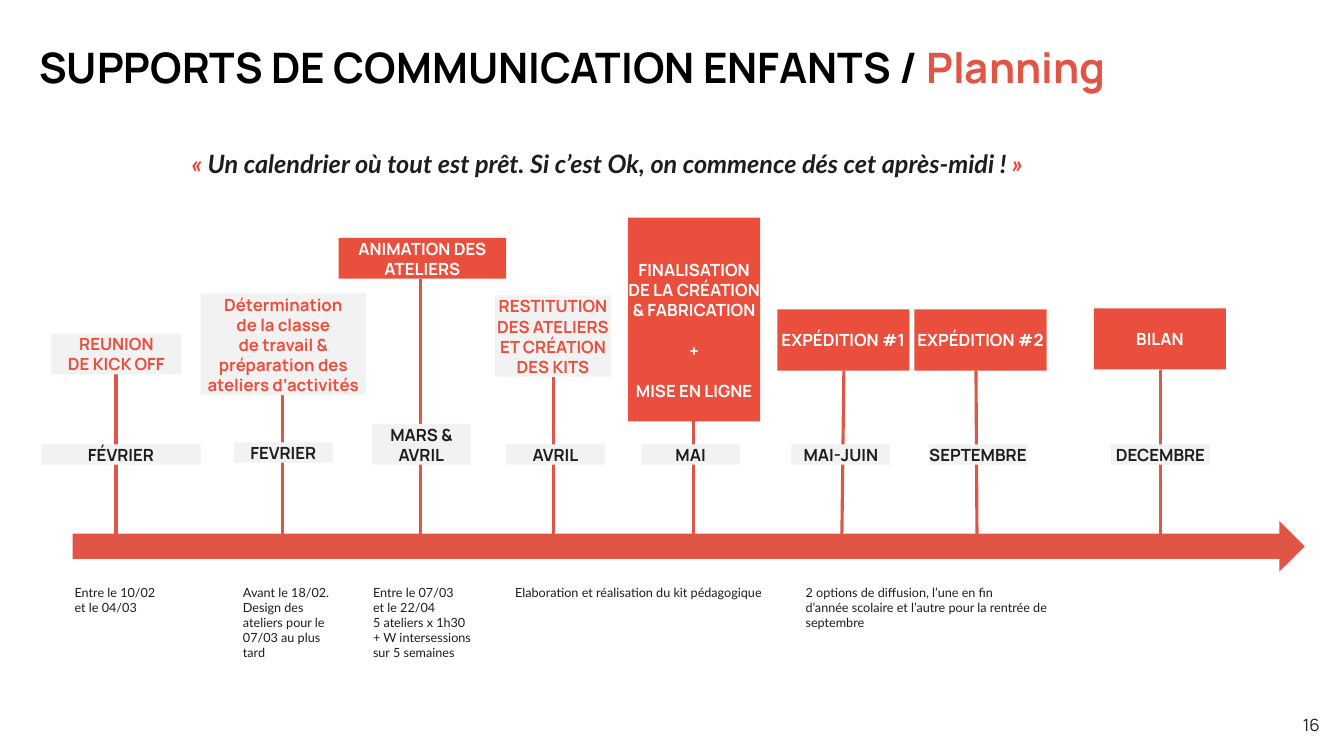
from lxml import etree
from pptx import Presentation
from pptx.dml.color import RGBColor
from pptx.enum.shapes import MSO_CONNECTOR, MSO_SHAPE
from pptx.enum.text import MSO_ANCHOR, MSO_AUTO_SIZE, PP_ALIGN
from pptx.oxml.ns import qn
from pptx.util import Inches, Pt

LEFT, CENTER, RIGHT = PP_ALIGN.LEFT, PP_ALIGN.CENTER, PP_ALIGN.RIGHT
TOP, MIDDLE, BOTTOM = MSO_ANCHOR.TOP, MSO_ANCHOR.MIDDLE, MSO_ANCHOR.BOTTOM
RECT, ARROW = MSO_SHAPE.RECTANGLE, MSO_SHAPE.RIGHT_ARROW
STRAIGHT, NO_FIT = MSO_CONNECTOR.STRAIGHT, MSO_AUTO_SIZE.NONE

BLACK = RGBColor(0x00, 0x00, 0x00)
WHITE = RGBColor(0xFF, 0xFF, 0xFF)
INK = RGBColor(0x1D, 0x1D, 0x1D)
GREY = RGBColor(0xF2, 0xF2, 0xF2)
CORAL = RGBColor(0xE0, 0x55, 0x46)
RED = RGBColor(0xEA, 0x4F, 0x3D)
QUOTE_RED = RGBColor(0xF4, 0x43, 0x36)

TITLE = [("SUPPORTS DE COMMUNICATION ENFANTS / ", BLACK), ("Planning", CORAL)]
QUOTE = [
    ("«\u00a0", QUOTE_RED),
    ("Un calendrier où tout est prêt. Si c’est Ok, on commence dés cet après-midi !\u00a0", INK),
    ("»", QUOTE_RED),
]
PAGE = "16"

# label, fill, centre, top, width, lines high, lines free below
STEPS = [
    ("REUNION\nDE KICK OFF", GREY, 11.55, 33.1, 12.9, 2, 0),
    ("Détermination\nde la classe\nde travail & préparation des ateliers d’activités",
     GREY, 28.1, 29.1, 16.4, 5, 0),
    ("ANIMATION DES ATELIERS", RED, 41.9, 23.6, 16.6, 2, 0),
    ("RESTITUTION DES ATELIERS ET CRÉATION DES KITS", GREY, 54.85, 29.3, 11.5, 4, 0),
    ("FINALISATION\nDE LA CRÉATION\n& FABRICATION\n\n+\n\nMISE EN LIGNE",
     RED, 68.85, 21.6, 13.1, 10, 1),
    ("EXPÉDITION #1", RED, 83.65, 30.7, 13.1, 3, 1),
    ("EXPÉDITION #2", RED, 97.25, 30.7, 13.1, 3, 1),
    ("BILAN", RED, 115.05, 30.6, 13.1, 3, 1),
]
# label, centre, bottom, width, lines high
MONTHS = [
    ("FÉVRIER", 12, 46.1, 15.8, 1),
    ("FEVRIER", 28.1, 45.9, 9.8, 1),
    ("MARS & AVRIL", 41.8, 46.1, 9.8, 2),
    ("AVRIL", 55.1, 46.1, 9.8, 1),
    ("MAI", 68.5, 46.1, 9.8, 1),
    ("MAI-JUIN", 83.4, 46.1, 9.8, 1),
    ("SEPTEMBRE", 97, 46.1, 9.8, 1),
    ("DECEMBRE", 115.1, 46.1, 9.8, 1),
]
# foot, head
STEMS = [(11.5, 11.5), (28, 28), (41.7, 41.7), (54.9, 54.9),
         (68.8, 68.8), (83.5, 83.7), (96.9, 96.8), (115.1, 115.1)]
# text, left, width
NOTES = [
    ("Entre le 10/02\net le 04/03", 7.4, 9.5),
    ("Avant le 18/02.\nDesign des ateliers pour le 07/03 au plus tard", 24.1, 8.9),
    ("Entre le 07/03\net le 22/04\n5 ateliers x 1h30\n+ W intersessions\nsur 5 semaines", 37, 11),
    ("Elaboration et réalisation du kit pédagogique", 51.1, 26.2),
    ("2 options de diffusion, l’une en fin\nd’année scolaire et l’autre pour la rentrée de septembre",
     79.9, 24),
]
LINE = 2.02
AXIS, NOTE_TOP = 53, 58


def grid(*cells):
    return [Inches(c / 10) for c in cells]


def write(sp, text, size=12, font="Manrope", color=INK, bold=False, italic=False,
          align=LEFT, anchor=TOP, below=0):
    tf = sp.text_frame
    tf.word_wrap, tf.auto_size, tf.vertical_anchor = True, NO_FIT, anchor
    tf.margin_left = tf.margin_top = tf.margin_right = 0
    tf.margin_bottom = grid(below)[0]
    if isinstance(text, str):
        paragraphs = [(i > 0 and j == 0, [(line, color)])
                      for i, group in enumerate(text.split("\n\n"))
                      for j, line in enumerate(group.split("\n"))]
    else:
        paragraphs = [(False, text)]
    for n, (gap, runs) in enumerate(paragraphs):
        p = tf.add_paragraph() if n else tf.paragraphs[0]
        p.alignment = align
        if gap:
            p.space_before = Pt(size * 1.2)
        for words, tone in runs:
            r = p.add_run()
            r.text = words
            f = r.font
            f.name, f.size, f.bold, f.italic = font, Pt(size), bold, italic
            f.color.rgb = tone


def add_block(s, kind, fill, *at):
    sp = s.shapes.add_shape(kind, *grid(*at))
    sp.shadow.inherit = False
    sp.fill.solid()
    sp.fill.fore_color.rgb = fill
    sp.line.fill.background()
    return sp


def add_stem(s, foot, head, top):
    c = s.shapes.add_connector(STRAIGHT, *grid(foot, AXIS, head, top))
    c.line.color.rgb = CORAL
    c.line.width = Pt(2.25)
    etree.SubElement(c._element.spPr, qn("a:effectLst"))


def main():
    prs = Presentation()
    prs.slide_width, prs.slide_height = Inches(13.33), Inches(7.5)
    s = prs.slides.add_slide(prs.slide_layouts[5])

    title = s.shapes.title
    title.left, title.top, title.width, title.height = grid(3.9, 4.1, 123.8, 5)
    write(title, TITLE, size=30, bold=True)
    write(s.shapes.add_textbox(*grid(19, 14.7, 94.8, 3)), QUOTE,
          size=18, font="Lato", bold=True, italic=True)

    add_block(s, ARROW, CORAL, 7.2, 51.7, 122.2, 5)
    for (foot, head), step in zip(STEMS, STEPS):
        label, fill, centre, top, width, lines, free = step
        height = lines * LINE
        add_stem(s, foot, head, top + height)
        sp = add_block(s, RECT, fill, centre - width / 2, top, width, height)
        write(sp, label, color=WHITE if fill == RED else RED, bold=True,
              align=CENTER, anchor=BOTTOM, below=free * LINE)
    for label, centre, bottom, width, lines in MONTHS:
        height = lines * LINE
        sp = add_block(s, RECT, GREY, centre - width / 2, bottom - height, width, height)
        write(sp, label, bold=True, align=CENTER, anchor=BOTTOM)

    for text, left, width in NOTES:
        write(s.shapes.add_textbox(*grid(left, NOTE_TOP, width, 7.6)), text, size=9, font="Lato")
    write(s.shapes.add_textbox(*grid(127.3, 70.4, 3.6, 3)), PAGE, align=RIGHT, anchor=MIDDLE)

    prs.save("out.pptx")


if __name__ == "__main__":
    main()
